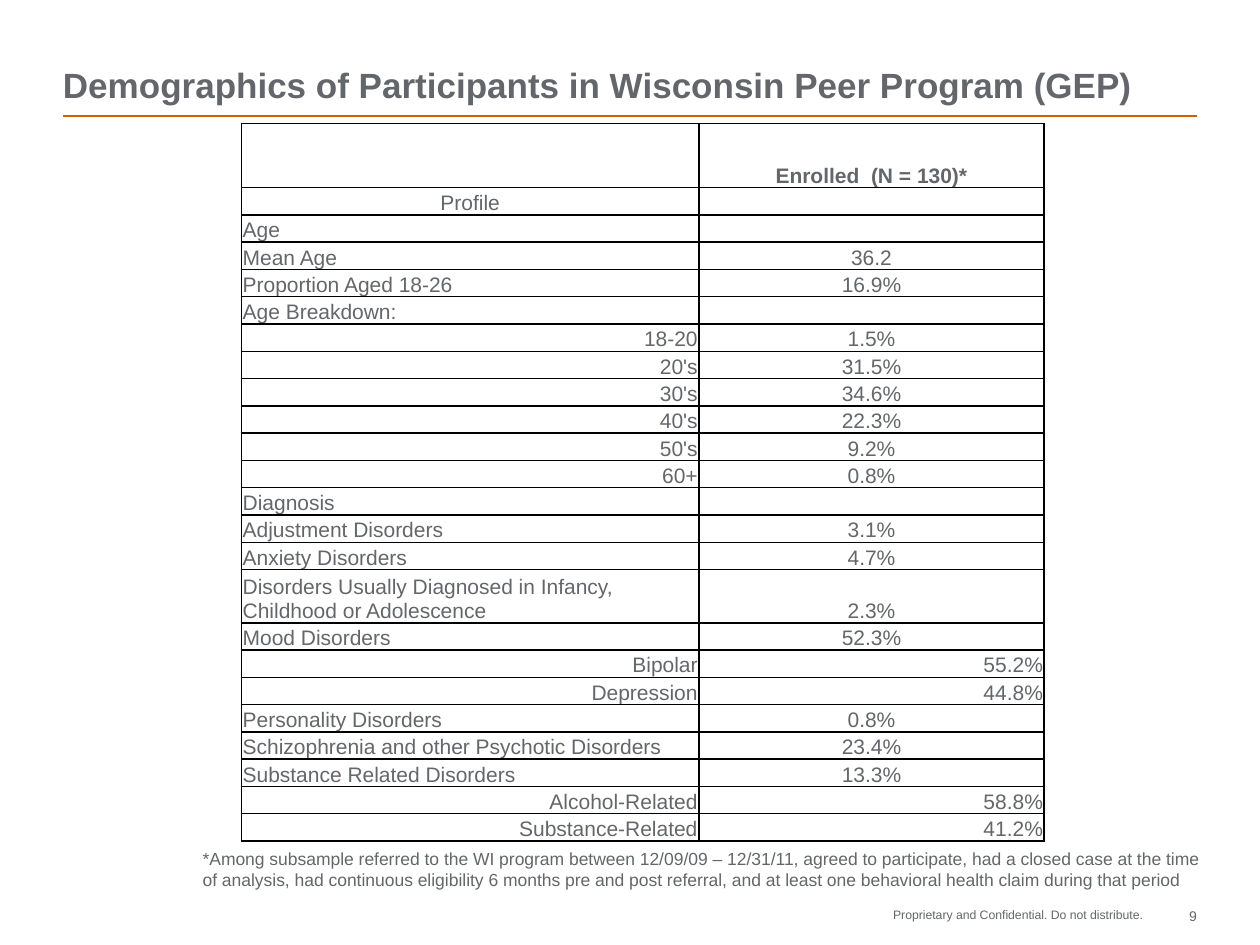
import pptx
import pptx.dml.color
import pptx.enum.shapes
import pptx.enum.text
import pptx.oxml
import pptx.oxml.ns
import pptx.util

Pt = pptx.util.Pt
ALIGN = pptx.enum.text.PP_ALIGN
ANCHOR = pptx.enum.text.MSO_ANCHOR
LEFT, CENTER, RIGHT = ALIGN.LEFT, ALIGN.CENTER, ALIGN.RIGHT

# Content
TITLE = "Demographics of Participants in Wisconsin Peer Program (GEP)"
FOOTNOTE = (
    "*Among subsample referred to the WI program between 12/09/09 – 12/31/11, "
    "agreed to participate, had a closed case at the time of analysis, had "
    "continuous eligibility 6 months pre and post referral, and at least one "
    "behavioral health claim during that period"
)
CONFIDENTIALITY = "Proprietary and Confidential. Do not distribute."
PAGE_NUMBER = "9"

# Label, label alignment, value, value alignment
PROFILE = [
    ("", LEFT, "Enrolled  (N = 130)*", CENTER),
    ("Profile", CENTER, "", CENTER),
    ("Age", LEFT, "", CENTER),
    ("Mean Age", LEFT, "36.2", CENTER),
    ("Proportion Aged 18-26", LEFT, "16.9%", CENTER),
    ("Age Breakdown:", LEFT, "", CENTER),
    ("18-20", RIGHT, "1.5%", CENTER),
    ("20's", RIGHT, "31.5%", CENTER),
    ("30's", RIGHT, "34.6%", CENTER),
    ("40's", RIGHT, "22.3%", CENTER),
    ("50's", RIGHT, "9.2%", CENTER),
    ("60+", RIGHT, "0.8%", CENTER),
    ("Diagnosis", LEFT, "", CENTER),
    ("Adjustment Disorders", LEFT, "3.1%", CENTER),
    ("Anxiety Disorders", LEFT, "4.7%", CENTER),
    ("Disorders Usually Diagnosed in Infancy, Childhood or Adolescence",
     LEFT, "2.3%", CENTER),
    ("Mood Disorders", LEFT, "52.3%", CENTER),
    ("Bipolar", RIGHT, "55.2%", RIGHT),
    ("Depression", RIGHT, "44.8%", RIGHT),
    ("Personality Disorders", LEFT, "0.8%", CENTER),
    ("Schizophrenia and other Psychotic Disorders", LEFT, "23.4%", CENTER),
    ("Substance Related Disorders", LEFT, "13.3%", CENTER),
    ("Alcohol-Related", RIGHT, "58.8%", RIGHT),
    ("Substance-Related", RIGHT, "41.2%", RIGHT),
]

# Layout and colours
GRAY, ORANGE, BLACK = "63666A", "D45D00", "000000"
COLUMN_WIDTHS = (261.4, 197.3)
ROW_HEIGHT = 15.6
TALL_ROWS = {0: 36.6, 15: 30.4}


def rgb(value):
    return pptx.dml.color.RGBColor.from_string(value)


def style(paragraph, size, align=LEFT, bold=False):
    paragraph.alignment = align
    font = paragraph.font
    font.name, font.size, font.bold = "Arial", Pt(size), bold
    font.color.rgb = rgb(GRAY)


def add_text(slide, text, box, size, align=LEFT, bold=False,
             anchor=ANCHOR.TOP, margins=(0, 0), wrap=True):
    frame = slide.shapes.add_textbox(*map(Pt, box)).text_frame
    frame.word_wrap = wrap
    frame.vertical_anchor = anchor
    frame.margin_left = frame.margin_right = Pt(margins[0])
    frame.margin_top = frame.margin_bottom = Pt(margins[1])
    paragraph = frame.paragraphs[0]
    paragraph.text = text
    style(paragraph, size, align, bold)
    return paragraph


def add_borders(cell):
    properties = cell._tc.get_or_add_tcPr()
    for position, side in enumerate(("lnL", "lnR", "lnT", "lnB")):
        properties.insert(position, pptx.oxml.parse_xml(
            f'<a:{side} {pptx.oxml.ns.nsdecls("a")} w="{Pt(1)}"><a:solidFill>'
            f'<a:srgbClr val="{BLACK}"/></a:solidFill></a:{side}>'))


def fill_cell(cell, text, align, bold):
    cell.fill.background()
    cell.vertical_anchor = ANCHOR.BOTTOM
    cell.margin_left = cell.margin_right = cell.margin_top = Pt(0.7)
    cell.margin_bottom = 0
    paragraph = cell.text_frame.paragraphs[0]
    paragraph.text = text
    style(paragraph, 12, align, bold)
    if not text:  # keeps an empty cell from stretching its row
        paragraph._p.get_or_add_endParaRPr().set("sz", "1200")
    add_borders(cell)


def add_profile_table(slide):
    heights = [TALL_ROWS.get(i, ROW_HEIGHT) for i in range(len(PROFILE))]
    table = slide.shapes.add_table(
        len(PROFILE), len(COLUMN_WIDTHS), Pt(138), Pt(70.6),
        Pt(sum(COLUMN_WIDTHS)), Pt(sum(heights))).table
    table.first_row = table.horz_banding = False
    for column, width in zip(table.columns, COLUMN_WIDTHS):
        column.width = Pt(width)
    for i, (label, label_align, value, value_align) in enumerate(PROFILE):
        table.rows[i].height = Pt(heights[i])
        fill_cell(table.cell(i, 0), label, label_align, i == 0)
        fill_cell(table.cell(i, 1), value, value_align, i == 0)


def main():
    deck = pptx.Presentation()
    deck.slide_width, deck.slide_height = Pt(720), Pt(540)
    slide = deck.slides.add_slide(deck.slide_layouts[6])

    # Title and rule
    rule = slide.shapes.add_connector(
        pptx.enum.shapes.MSO_CONNECTOR.STRAIGHT,
        Pt(36), Pt(66.2), Pt(684), Pt(66.2))
    rule.line.color.rgb = rgb(ORANGE)
    rule.line.width = Pt(1)
    rule._element.spPr.append(pptx.oxml.parse_xml(
        f'<a:effectLst {pptx.oxml.ns.nsdecls("a")}/>'))
    title = add_text(slide, TITLE, (36, 12.2, 648, 48.2), 20, bold=True,
                     anchor=ANCHOR.BOTTOM)
    title.line_spacing = 0.9

    # Table and footnote
    add_profile_table(slide)
    add_text(slide, FOOTNOTE, (108.7, 481, 588.3, 31.7), 10,
             margins=(7.2, 3.6))

    # Footer
    add_text(slide, CONFIDENTIALITY, (509.8, 518.4, 143.3, 8.6), 7, RIGHT,
             wrap=False)
    add_text(slide, PAGE_NUMBER, (660.2, 518.4, 23.8, 12.2), 8, RIGHT)

    deck.save("out.pptx")


if __name__ == "__main__":
    main()
